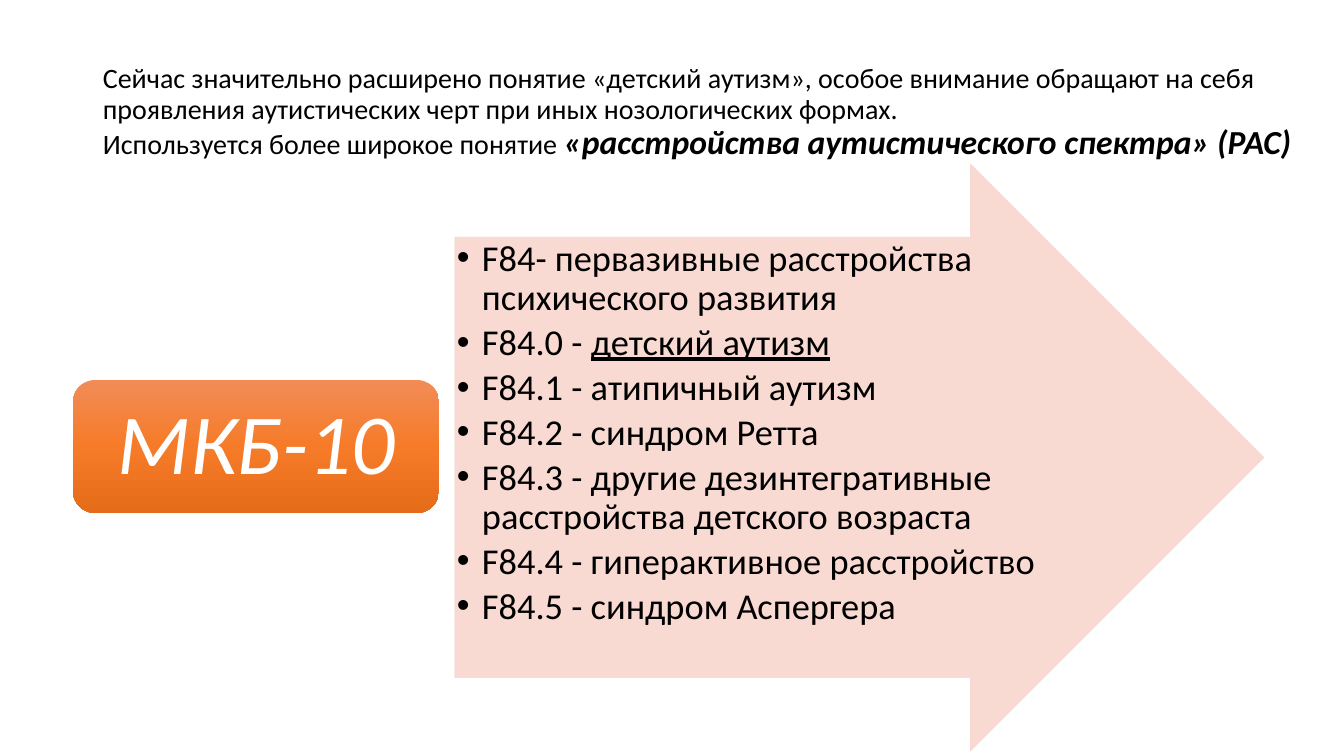
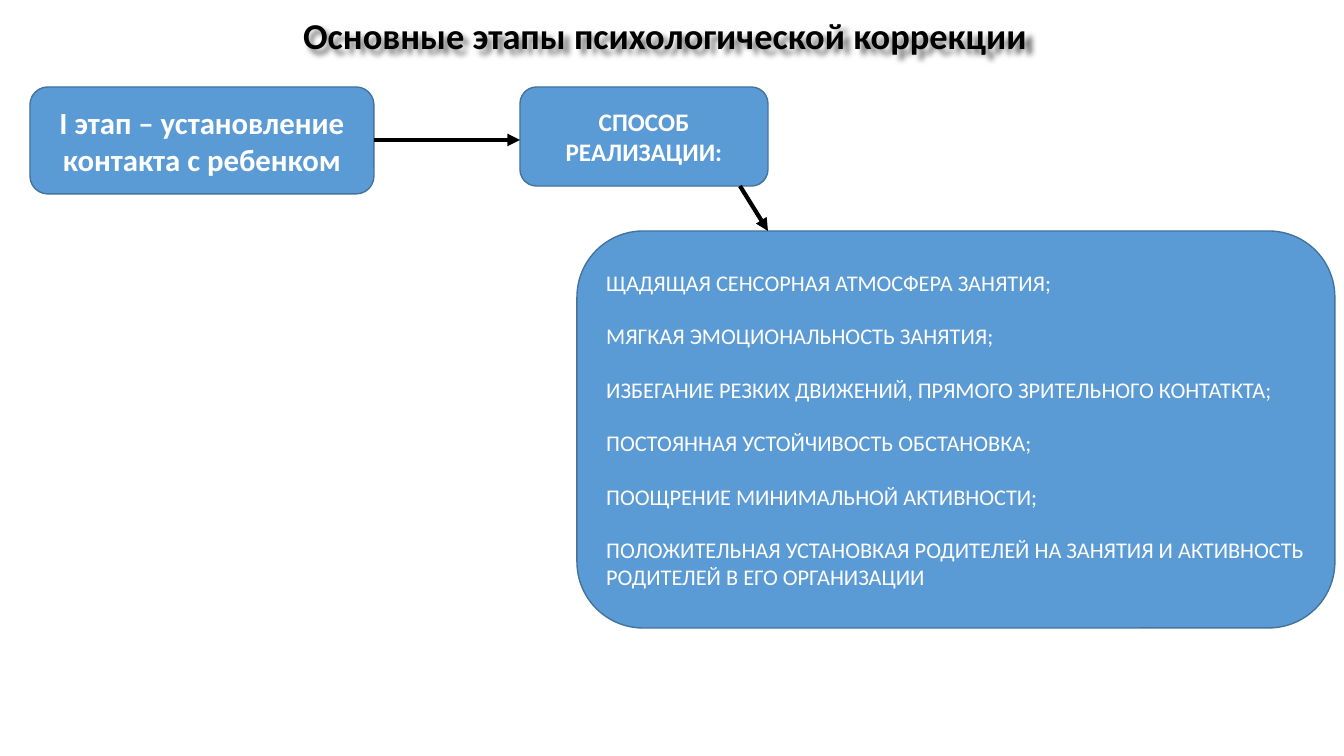
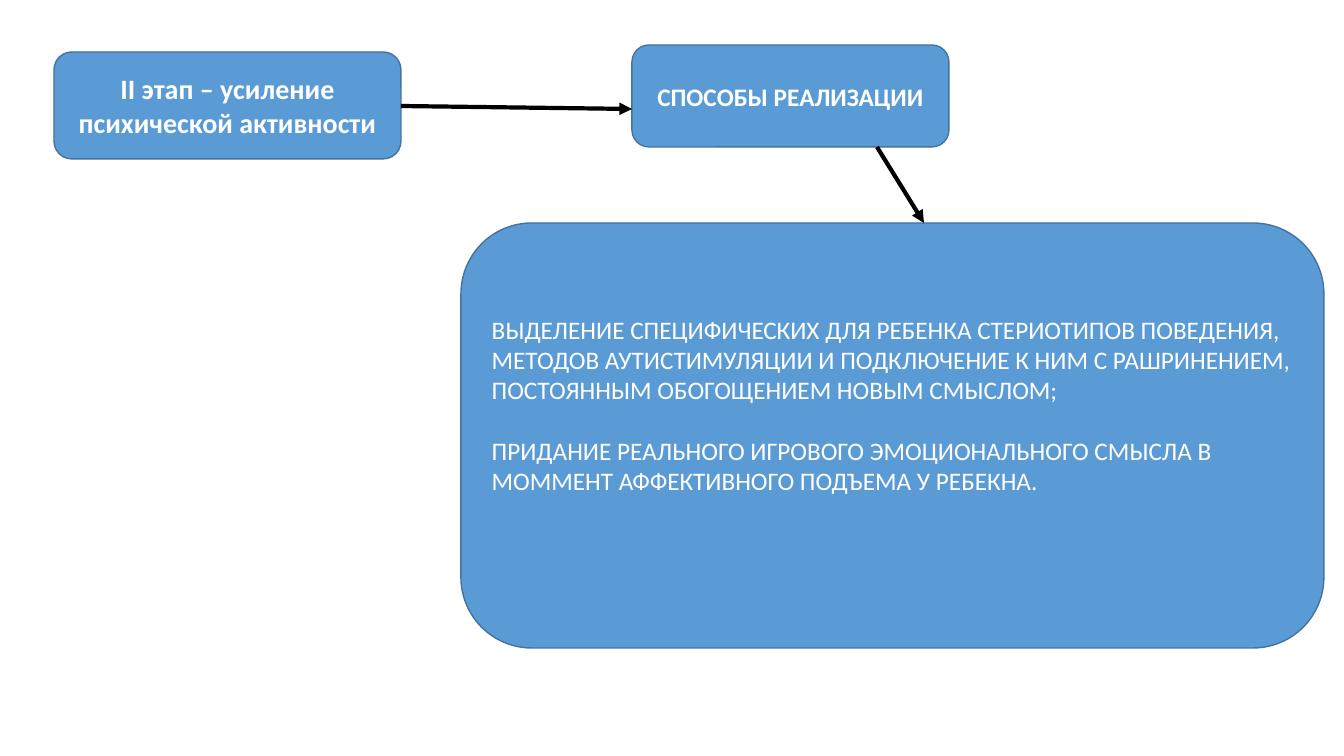
from pptx import Presentation
from pptx.dml.color import RGBColor
from pptx.enum.shapes import MSO_CONNECTOR, MSO_SHAPE
from pptx.enum.text import MSO_ANCHOR, PP_ALIGN
from pptx.oxml import parse_xml
from pptx.oxml.ns import qn
from pptx.util import Emu, Pt

PX = 12192000 / 1344  # EMU in one px of a 1344 x 756 slide
LEFT, CENTER = PP_ALIGN.LEFT, PP_ALIGN.CENTER
TOP, MIDDLE = MSO_ANCHOR.TOP, MSO_ANCHOR.MIDDLE
ROUNDED, RIGHT_ARROW = MSO_SHAPE.ROUNDED_RECTANGLE, MSO_SHAPE.RIGHT_ARROW
STRAIGHT = MSO_CONNECTOR.STRAIGHT

FONT = "Calibri"
BLACK, WHITE = "000000", "FFFFFF"
BLUE, BLUE_EDGE = "5B9BD5", "43739E"
PINK = "F8D7CE"
ORANGES = {0: "F18C57", 50: "F67B28", 100: "E56C19"}
DRAWING = 'xmlns:a="http://schemas.openxmlformats.org/drawingml/2006/main"'


def px(length):
    return Emu(round(length * PX))


def color(hex_text):
    return RGBColor.from_string(hex_text)


def drawing_xml(tag, attributes="", content=""):
    return parse_xml(f"<a:{tag} {DRAWING} {attributes}>{content}</a:{tag}>")


def add_bullet(paragraph, indent):
    properties = paragraph._p.get_or_add_pPr()
    properties.set("marL", str(px(indent)))
    properties.set("indent", str(-px(indent)))
    properties.append(drawing_xml("buFont", 'typeface="Arial"'))
    properties.append(drawing_xml("buChar", 'char="•"'))


def write_text(shape, paragraphs, size=18, ink=BLACK, bold=False, italic=False,
               align=LEFT, anchor=MIDDLE, line_spacing=1.0, gap=0,
               bullet_indent=0, insets=None):
    """Each paragraph is a string or a list of (text, font settings) runs."""
    frame = shape.text_frame
    frame.word_wrap = True
    frame.vertical_anchor = anchor
    if insets:
        (frame.margin_left, frame.margin_top,
         frame.margin_right, frame.margin_bottom) = map(px, insets)
    for index, content in enumerate(paragraphs):
        paragraph = frame.add_paragraph() if index else frame.paragraphs[0]
        paragraph.alignment = align
        paragraph.line_spacing = line_spacing
        if index and gap:
            paragraph.space_before = Pt(gap)
        if bullet_indent:
            add_bullet(paragraph, bullet_indent)
        runs = [(content, {})] if isinstance(content, str) else content
        for text, settings in runs:
            run = paragraph.add_run()
            run.text = text
            font = run.font
            font.name, font.size = FONT, Pt(size)
            font.bold, font.italic = bold, italic
            font.color.rgb = color(ink)
            for name, value in settings.items():
                setattr(font, name, value)


def add_text(slide, box, paragraphs, **text_format):
    text_box = slide.shapes.add_textbox(*map(px, box))
    write_text(text_box, paragraphs, **text_format)
    return text_box


def add_shape(slide, kind, box, fill, edge=None, edge_width=1):
    shape = slide.shapes.add_shape(kind, *map(px, box))
    shape.shadow.inherit = False
    if isinstance(fill, dict):
        stops = "".join(f'<a:gs pos="{position * 1000}"><a:srgbClr val="{shade}"/></a:gs>'
                        for position, shade in fill.items())
        gradient = drawing_xml("gradFill", 'rotWithShape="1"',
                               f'<a:gsLst>{stops}</a:gsLst><a:lin ang="5400000" scaled="0"/>')
        shape._element.spPr.find(qn("a:prstGeom")).addnext(gradient)
    else:
        shape.fill.solid()
        shape.fill.fore_color.rgb = color(fill)
    if edge:
        shape.line.color.rgb = color(edge)
        shape.line.width = Pt(edge_width)
    else:
        shape.line.fill.background()
    return shape


def set_opacity(shape, percent):
    for shade in shape._element.spPr.iter(qn("a:srgbClr")):
        shade.append(drawing_xml("alpha", f'val="{percent * 1000}"'))


def add_card(slide, box, paragraphs, **text_format):
    card = add_shape(slide, ROUNDED, box, BLUE, BLUE_EDGE)
    write_text(card, paragraphs, ink=WHITE, **text_format)


def add_arrow(slide, start, end):
    arrow = slide.shapes.add_connector(STRAIGHT, *map(px, start + end))
    arrow.line.color.rgb = color(BLACK)
    arrow.line.width = Pt(3)
    arrow.line._get_or_add_ln().append(drawing_xml("tailEnd", 'type="triangle"'))
    arrow._element.spPr.append(drawing_xml("effectLst"))


def add_text_shadow(shape):
    shadow = ('<a:outerShdw blurRad="50800" dist="50800" dir="2700000" algn="tl">'
              '<a:srgbClr val="000000"><a:alpha val="50000"/></a:srgbClr></a:outerShdw>')
    shape._element.spPr.append(drawing_xml("effectLst", content=shadow))


def build_classification(slide):
    # Introduction
    add_text(slide, (93, 40, 1230, 146), [
        "Сейчас значительно расширено понятие «детский аутизм», особое внимание "
        "обращают на себя проявления аутистических черт при иных нозологических формах.",
        [("Используется более широкое понятие ", {}),
         ("«расстройства аутистического спектра» (РАС)",
          {"size": Pt(24), "bold": True, "italic": True})],
    ], size=20, line_spacing=0.9)

    # Arrow with the list of codes
    arrow = add_shape(slide, RIGHT_ARROW, (455, 164, 809, 587), PINK, PINK, 0.5)
    arrow.adjustments[0] = 0.75
    arrow.adjustments[1] = 0.5
    set_opacity(arrow, 90)
    add_text(slide, (455, 238, 590, 439), [
        "F84- первазивные расстройства психического развития",
        [("F84.0 - ", {}), ("детский аутизм", {"underline": True})],
        "F84.1 - атипичный аутизм",
        "F84.2 - синдром Ретта",
        "F84.3 - другие дезинтегративные расстройства детского возраста",
        "F84.4 - гиперактивное расстройство",
        "F84.5 - синдром Аспергера",
    ], size=26, anchor=TOP, line_spacing=0.9, gap=4, bullet_indent=25, insets=(2, 2, 2, 2))

    # Classification name
    badge = add_shape(slide, ROUNDED, (73, 380, 366, 133), ORANGES)
    write_text(badge, ["МКБ-10"], size=61, ink=WHITE, italic=True, align=CENTER,
               line_spacing=0.9, insets=(0, 0, 0, 0))


def build_first_stage(slide):
    title = add_text(slide, (86, 18, 1159, 39), ["Основные этапы психологической коррекции"],
                     size=26, bold=True, align=CENTER, line_spacing=0.9)
    add_text_shadow(title)

    # Stage, method and its details
    add_card(slide, (30, 87, 344, 107), ["I этап – установление контакта с ребенком"],
             size=22, bold=True, align=CENTER)
    add_card(slide, (520, 87, 248, 99), ["СПОСОБ РЕАЛИЗАЦИИ:"], bold=True, align=CENTER)
    add_card(slide, (577, 231, 758, 397), [
        "ЩАДЯЩАЯ СЕНСОРНАЯ АТМОСФЕРА ЗАНЯТИЯ;",
        "МЯГКАЯ ЭМОЦИОНАЛЬНОСТЬ ЗАНЯТИЯ;",
        "ИЗБЕГАНИЕ РЕЗКИХ ДВИЖЕНИЙ, ПРЯМОГО ЗРИТЕЛЬНОГО КОНТАТКТА;",
        "ПОСТОЯННАЯ УСТОЙЧИВОСТЬ ОБСТАНОВКА;",
        "ПООЩРЕНИЕ МИНИМАЛЬНОЙ АКТИВНОСТИ;",
        "ПОЛОЖИТЕЛЬНАЯ УСТАНОВКАЯ РОДИТЕЛЕЙ НА ЗАНЯТИЯ И АКТИВНОСТЬ "
        "РОДИТЕЛЕЙ В ЕГО ОРГАНИЗАЦИИ",
    ], size=16, gap=19)
    add_arrow(slide, (374, 140), (520, 140))
    add_arrow(slide, (740, 186), (768, 231))


def build_second_stage(slide):
    # Stage, method and its details
    add_card(slide, (54, 52, 347, 107), ["II этап – усиление психической активности"],
             size=20, bold=True, align=CENTER)
    add_card(slide, (632, 45, 317, 102), ["СПОСОБЫ РЕАЛИЗАЦИИ"], bold=True, align=CENTER)
    add_card(slide, (461, 223, 863, 425), [
        "ВЫДЕЛЕНИЕ СПЕЦИФИЧЕСКИХ ДЛЯ РЕБЕНКА СТЕРИОТИПОВ ПОВЕДЕНИЯ, МЕТОДОВ "
        "АУТИСТИМУЛЯЦИИ И ПОДКЛЮЧЕНИЕ К НИМ С РАШРИНЕНИЕМ, ПОСТОЯННЫМ "
        "ОБОГОЩЕНИЕМ НОВЫМ СМЫСЛОМ;",
        "ПРИДАНИЕ РЕАЛЬНОГО ИГРОВОГО ЭМОЦИОНАЛЬНОГО СМЫСЛА В МОММЕНТ "
        "АФФЕКТИВНОГО ПОДЪЕМА У РЕБЕКНА.",
    ], gap=22, insets=(10, 5, 10, 66))
    add_arrow(slide, (401, 106), (632, 109))
    add_arrow(slide, (877, 147), (924, 223))


def main():
    presentation = Presentation()
    presentation.slide_width, presentation.slide_height = px(1344), px(756)
    blank = presentation.slide_layouts[6]
    for build in (build_classification, build_first_stage, build_second_stage):
        build(presentation.slides.add_slide(blank))
    presentation.save("out.pptx")


if __name__ == "__main__":
    main()
